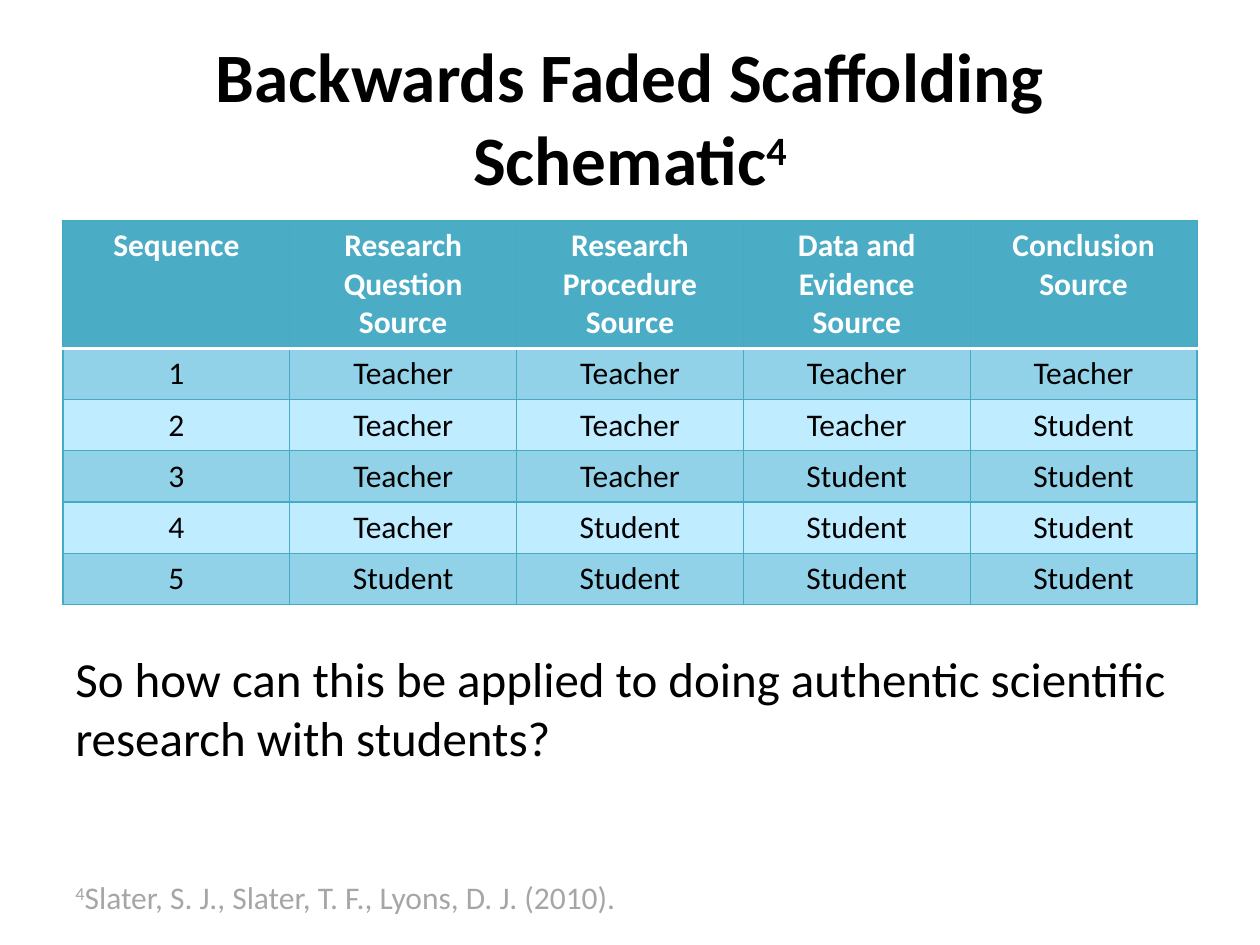
from lxml import etree
from pptx import Presentation
from pptx.dml.color import RGBColor
from pptx.enum import text
from pptx.oxml.ns import qn
from pptx.util import Pt

BLACK = RGBColor(0x00, 0x00, 0x00)
WHITE = RGBColor(0xFF, 0xFF, 0xFF)
GRAY = RGBColor(0xA6, 0xA6, 0xA6)
TEAL = RGBColor(0x4B, 0xAC, 0xC6)
GRID = RGBColor(0x46, 0xAA, 0xC5)
DARK_BAND = RGBColor(0x92, 0xD2, 0xE8)
LIGHT_BAND = RGBColor(0xBF, 0xED, 0xFF)
FONT = "Calibri"
CENTER = text.PP_ALIGN.CENTER

# Each run is (words, is superscript)
TITLE = [("Backwards Faded Scaffolding Schematic", False), ("4", True)]
QUESTION = [("So how can this be applied to doing authentic scientific "
             "research with students?", False)]
CITATION = [("4", True),
            ("Slater, S. J., Slater, T. F., Lyons, D. J. (2010).", False)]
HEADER = ["Sequence", "Research Question Source", "Research Procedure Source",
          "Data and Evidence Source", "Conclusion Source"]
SOURCES = len(HEADER) - 1
# Each step hands one more source from the teacher to the student
ROWS = [HEADER] + [
    [str(step)] + ["Teacher"] * (SOURCES + 1 - step) + ["Student"] * (step - 1)
    for step in range(1, SOURCES + 2)]

LEFT, WIDTH = 36, 648
TABLE_TOP, HEADER_HEIGHT, ROW_HEIGHT = 126, 73.2, 29.25


def style(p, size, color, bold=False, align=None):
    p.alignment = align
    p.font.name = FONT
    p.font.size = Pt(size)
    p.font.bold = bold
    p.font.color.rgb = color


def add_text(slide, top, height, runs, size, color, bold=False, align=None,
             anchor=text.MSO_ANCHOR.TOP):
    tf = slide.shapes.add_textbox(Pt(LEFT), Pt(top), Pt(WIDTH), Pt(height)).text_frame
    tf.word_wrap = True
    tf.vertical_anchor = anchor
    p = tf.paragraphs[0]
    style(p, size, color, bold, align)
    for words, is_super in runs:
        r = p.add_run()
        r.text = words
        if is_super:
            r.font._element.set("baseline", "30000")


def set_borders(cell, **sides):
    """Draw cell sides, given in the order L, R, T, B as (colour, points)."""
    tc_pr = cell._tc.get_or_add_tcPr()
    for side, (color, width) in sides.items():
        ln = etree.SubElement(tc_pr, qn("a:ln" + side), w=str(int(Pt(width))))
        fill = etree.SubElement(ln, qn("a:solidFill"))
        etree.SubElement(fill, qn("a:srgbClr"), val=str(color))


def add_schematic(slide):
    height = HEADER_HEIGHT + ROW_HEIGHT * (len(ROWS) - 1)
    table = slide.shapes.add_table(len(ROWS), len(HEADER), Pt(LEFT), Pt(TABLE_TOP),
                                   Pt(WIDTH), Pt(height)).table
    for column in table.columns:
        column.width = Pt(WIDTH / len(HEADER))
    line, divider = (GRID, 0.75), (WHITE, 2)
    for i, row in enumerate(ROWS):
        is_header = i == 0
        table.rows[i].height = Pt(HEADER_HEIGHT if is_header else ROW_HEIGHT)
        band = TEAL if is_header else DARK_BAND if i % 2 else LIGHT_BAND
        for j, words in enumerate(row):
            cell = table.cell(i, j)
            set_borders(cell, L=line, R=line, T=divider if i == 1 else line,
                        B=divider if is_header else line)
            cell.fill.solid()
            cell.fill.fore_color.rgb = band
            cell.text = words
            style(cell.text_frame.paragraphs[0], 18, WHITE if is_header else BLACK,
                  is_header, CENTER)


prs = Presentation()
prs.slide_width, prs.slide_height = Pt(720), Pt(540)
s = prs.slides.add_slide(prs.slide_layouts[6])
add_text(s, 21.6, 90, TITLE, 39.6, BLACK, True, CENTER, text.MSO_ANCHOR.MIDDLE)
add_schematic(s)
add_text(s, 498.25, 29, CITATION, 18, GRAY)
add_text(s, 367.2, 75, QUESTION, 28, BLACK)
prs.save("out.pptx")
